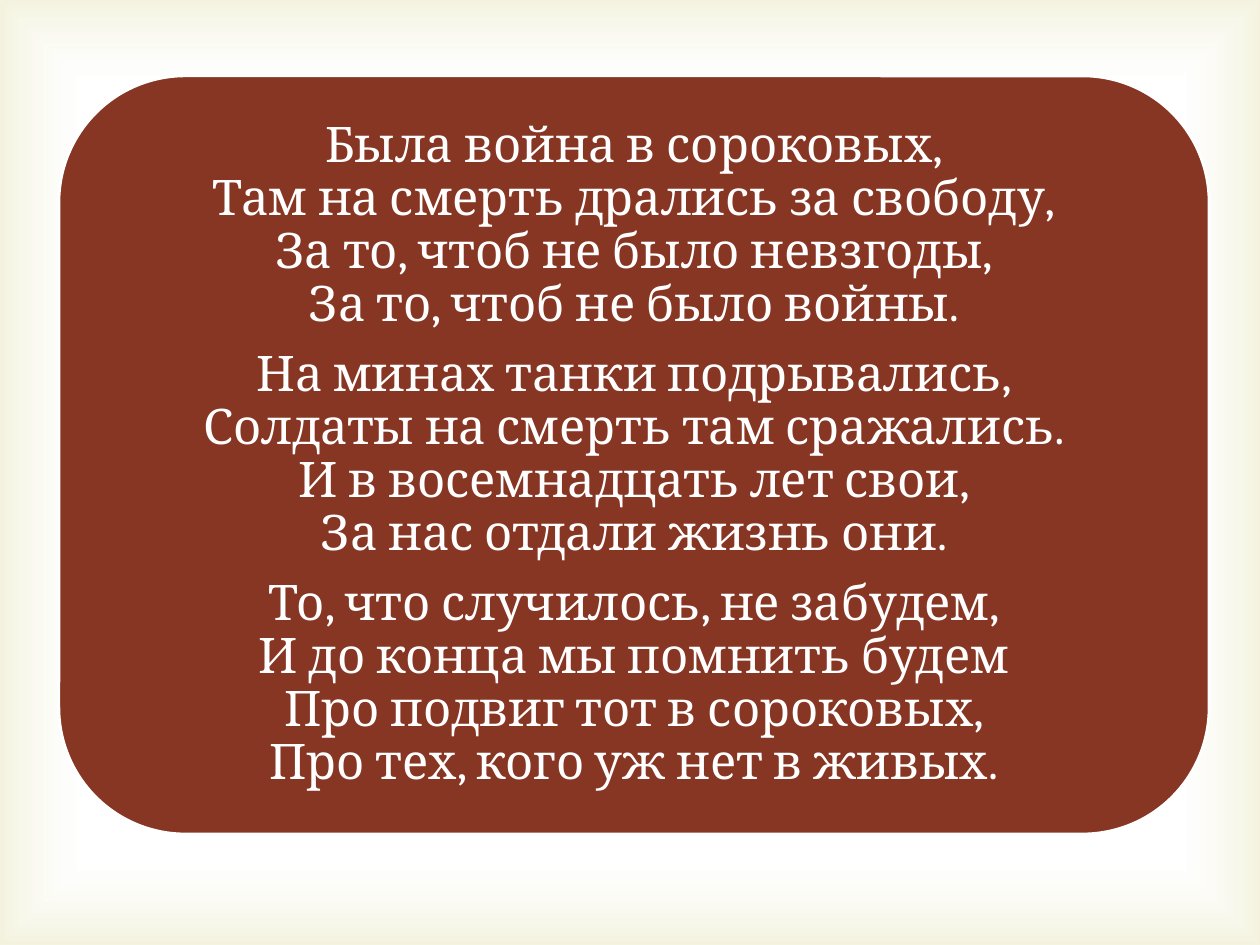
from lxml import etree
from pptx import Presentation
from pptx.dml.color import RGBColor
from pptx.enum.shapes import MSO_SHAPE
from pptx.enum.text import MSO_ANCHOR, PP_ALIGN
from pptx.oxml import parse_xml
from pptx.util import Emu, Pt

RECT, ROUND = MSO_SHAPE.RECTANGLE, MSO_SHAPE.ROUNDED_RECTANGLE
CENTER, MIDDLE = PP_ALIGN.CENTER, MSO_ANCHOR.MIDDLE
NS = "http://schemas.openxmlformats.org/drawingml/2006/main"

# Content
STANZAS = [
    ["Была война в сороковых,",
     "Там на смерть дрались за свободу,",
     "За то, чтоб не было невзгоды,",
     "За то, чтоб не было войны."],
    ["На минах танки подрывались,",
     "Солдаты на смерть там сражались.",
     "И в восемнадцать лет свои,",
     "За нас отдали жизнь они."],
    ["То, что случилось, не забудем,",
     "И до конца мы помнить будем",
     "Про подвиг тот в сороковых,",
     "Про тех, кого уж нет в живых."],
]
COLORS = {"white": "FFFFFF", "glow": "D1CA75", "panel": "873624"}

# Layout in px
SLIDE = (1260, 945)
PANEL = (59, 76, 1150, 758)
INSET = 37
PADDING = 15


def px(n):
    return Emu(n * 914400 // 126)


def rgb(name):
    return RGBColor.from_string(COLORS[name])


def add_box(s, kind, box):
    sp = s.shapes.add_shape(kind, *map(px, box))
    sp.shadow.inherit = False
    return sp


def fill_glow(sp, stops):
    """Fill with a rectangular gradient; stops are (position, colour, opacity) in %."""
    gs = "".join(
        f'<a:gs pos="{pos * 1000}"><a:srgbClr val="{COLORS[color]}">'
        f'<a:alpha val="{alpha * 1000}"/></a:srgbClr></a:gs>'
        for pos, color, alpha in stops)
    grad = parse_xml(
        f'<a:gradFill xmlns:a="{NS}" rotWithShape="1"><a:gsLst>{gs}</a:gsLst>'
        '<a:path path="rect"><a:fillToRect l="50000" t="50000" r="50000" b="50000"/>'
        '</a:path></a:gradFill>')
    sp._element.spPr.find(etree.QName(NS, "prstGeom")).addnext(grad)


def add_text(s, box, paragraphs, *, font, size, color, spacing, after):
    tf = s.shapes.add_textbox(*map(px, box)).text_frame
    tf.word_wrap = True
    tf.vertical_anchor = MIDDLE
    tf.margin_left = tf.margin_right = tf.margin_top = tf.margin_bottom = px(PADDING)
    for i, lines in enumerate(paragraphs):
        p = tf.paragraphs[0] if i == 0 else tf.add_paragraph()
        p.text = "\v".join(lines)
        p.alignment = CENTER
        p.line_spacing = spacing
        p.space_after = Pt(after)
        for r in p.runs:
            r.font.name = font
            r.font.size = Pt(size)
            r.font.color.rgb = rgb(color)


prs = Presentation()
prs.slide_width, prs.slide_height = map(px, SLIDE)
s = prs.slides.add_slide(prs.slide_layouts[6])

# Soft glow along the slide edges
glow = add_box(s, RECT, (0, 0, *SLIDE))
fill_glow(glow, [(83, "white", 11), (100, "glow", 23)])
glow.line.fill.background()

# Rounded panel
panel = add_box(s, ROUND, PANEL)
panel.fill.solid()
panel.fill.fore_color.rgb = rgb("panel")
panel.line.color.rgb = rgb("white")
panel.line.width = Pt(1.5)

# Poem
x, y, w, h = PANEL
add_text(s, (x + INSET, y + INSET, w - 2 * INSET, h - 2 * INSET), STANZAS,
         font="Cambria", size=28, color="white", spacing=0.9, after=9.8)

prs.save("out.pptx")
